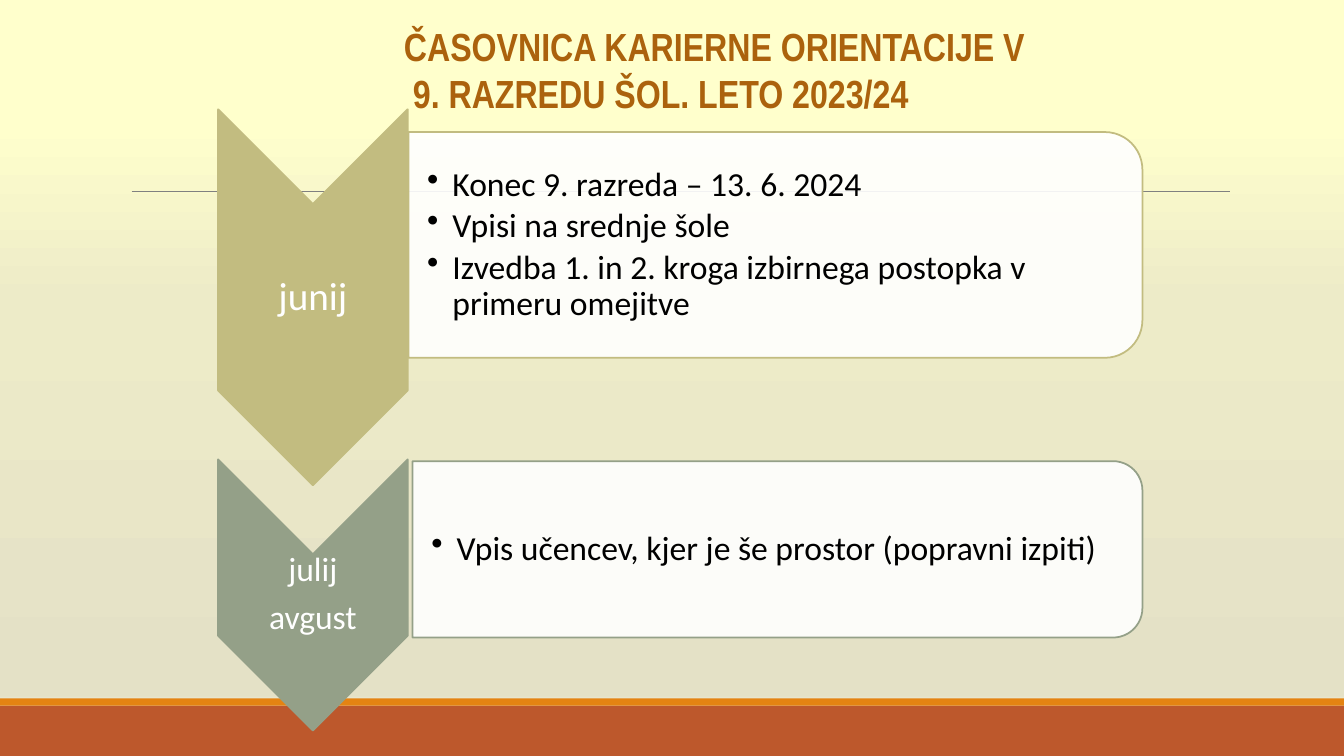
from dataclasses import dataclass

from lxml.etree import SubElement
from pptx import Presentation
from pptx.dml.color import RGBColor
from pptx.enum.shapes import MSO_CONNECTOR, MSO_SHAPE as SHAPE
from pptx.enum.text import MSO_ANCHOR, MSO_AUTO_SIZE, PP_ALIGN as ALIGN
from pptx.oxml.ns import qn
from pptx.util import Pt

WIDTH, HEIGHT = 960, 540
CHEVRON_X, CHEVRON_WIDTH = 223.5, 135.4
PANEL_RIGHT = 816
CORNER_INSET = 0.293 / 6  # text inset of a rounded corner, as a share of panel height
BACKGROUND = [(16, "FFFFCC"), (40, "EDEBC8"), (92, "E4E1C6"),
              (93, "EFEEDE"), (100, "EDEBD9")]


@dataclass
class Step:
    months: list[str]
    tasks: list[str]
    color: str
    month_size: float
    chevron_y: float
    chevron_length: float
    panel_left: float
    panel_y: float
    panel_height: float


STEPS = [
    Step(["junij"],
         ["Konec 9. razreda – 13. 6. 2024", "Vpisi na srednje šole",
          "Izvedba 1. in 2. kroga izbirnega postopka v primeru omejitve"],
         "C2BC80", 28, 212.4, 268.6, 291.7, 175, 161.3),
    Step(["julij", "avgust"],
         ["Vpis učencev, kjer je še prostor (popravni izpiti)"],
         "94A088", 24, 425, 193.7, 294.7, 392.4, 126),
]


def rgb(value: str) -> RGBColor:
    return RGBColor.from_string(value)


def set_background(s) -> None:
    fill = s.background.fill
    fill.gradient()
    fill.gradient_angle = 270
    stops = s.element.find(".//" + qn("a:gsLst"))
    stops.clear()
    for position, color in BACKGROUND:
        stop = SubElement(stops, qn("a:gs"), pos=str(position * 1000))
        SubElement(stop, qn("a:srgbClr"), val=color)


def add_box(s, kind, left: float, top: float, width: float, height: float,
            fill: str, line: str | None = None):
    sp = s.shapes.add_shape(kind, Pt(left), Pt(top), Pt(width), Pt(height))
    sp.shadow.inherit = False
    sp.fill.solid()
    sp.fill.fore_color.rgb = rgb(fill)
    if line:
        sp.line.color.rgb = rgb(line)
        sp.line.width = Pt(1.25)
    else:
        sp.line.fill.background()
    return sp


def add_turned(s, kind, x: float, y: float, across: float, down: float,
               fill: str, line: str):
    """Draw a shape turned a quarter clockwise, centred on (x, y)."""
    sp = add_box(s, kind, x - down / 2, y - across / 2, down, across, fill, line)
    sp.rotation = 90
    return sp


def add_text(s, left: float, y: float, width: float, height: float,
             lines: list[str], size: float, color: str, gap: float, inset: float,
             bullets: bool = False) -> None:
    """Write Calibri lines in a box whose vertical middle is y."""
    sp = s.shapes.add_textbox(Pt(left), Pt(y - height / 2), Pt(width), Pt(height))
    tf = sp.text_frame
    tf.word_wrap = True
    tf.vertical_anchor = MSO_ANCHOR.MIDDLE
    tf.margin_left = Pt(inset)
    tf.margin_top = tf.margin_right = tf.margin_bottom = Pt(1.5)
    for i, line in enumerate(lines):
        p = tf.add_paragraph() if i else tf.paragraphs[0]
        p.text = line
        p.alignment = ALIGN.LEFT if bullets else ALIGN.CENTER
        p.line_spacing = 0.9
        p.space_after = Pt(size * gap)
        p.font.name = "Calibri"
        p.font.size = Pt(size)
        p.font.color.rgb = rgb(color)
        if bullets:
            pr = p._p.get_or_add_pPr()
            pr.set("marL", str(Pt(18)))
            pr.set("indent", str(-Pt(18)))
            bullet = pr.makeelement(qn("a:buChar"), {"char": "•"})
            pr.insert_element_before(bullet, "a:tabLst", "a:defRPr", "a:extLst")


def add_step(s, step: Step) -> None:
    add_turned(s, SHAPE.CHEVRON, CHEVRON_X, step.chevron_y, CHEVRON_WIDTH,
               step.chevron_length, step.color, step.color)
    add_text(s, CHEVRON_X - CHEVRON_WIDTH / 2, step.chevron_y, CHEVRON_WIDTH,
             step.chevron_length - CHEVRON_WIDTH, step.months, step.month_size,
             "FFFFFF", 0.35, 1.5)

    # A turned panel: its long side runs across the slide.
    width = PANEL_RIGHT - step.panel_left
    panel = add_turned(s, SHAPE.ROUND_2_SAME_RECTANGLE,
                       step.panel_left + width / 2, step.panel_y, width,
                       step.panel_height, "FFFFFF", step.color)
    color = panel.fill._xPr.find(qn("a:solidFill")).find(qn("a:srgbClr"))
    SubElement(color, qn("a:alpha"), val="90000")
    inset = step.panel_height * CORNER_INSET
    add_text(s, step.panel_left, step.panel_y, width - inset,
             step.panel_height - 2 * inset, step.tasks, 24, "000000", 0.15, 13.5,
             bullets=True)


def add_rule(s) -> None:
    rule = s.shapes.add_connector(MSO_CONNECTOR.STRAIGHT, Pt(94), Pt(136.5),
                                  Pt(878.5), Pt(136.5))
    rule.line.color.rgb = rgb("808080")
    rule.line.width = Pt(0.5)
    SubElement(rule._element.spPr, qn("a:effectLst"))


def add_title(s) -> None:
    sp = s.shapes.add_textbox(Pt(281.5), Pt(12.2), Pt(534), Pt(75))
    tf = sp.text_frame
    tf.word_wrap = True
    tf.auto_size = MSO_AUTO_SIZE.SHAPE_TO_FIT_TEXT
    tf.text = "ČASOVNICA KARIERNE ORIENTACIJE V\n 9. RAZREDU ŠOL. LETO 2023/24"
    for p in tf.paragraphs:
        p.font.name = "Arial Narrow"
        p.font.size = Pt(28)
        p.font.bold = True
        p.font.color.rgb = rgb("AB620D")


def main() -> None:
    prs = Presentation()
    prs.slide_width, prs.slide_height = Pt(WIDTH), Pt(HEIGHT)
    s = prs.slides.add_slide(prs.slide_layouts[6])
    set_background(s)
    add_rule(s)
    add_box(s, SHAPE.RECTANGLE, 0, 504, WIDTH, 36, "BD582C")
    add_box(s, SHAPE.RECTANGLE, 0, 498.8, WIDTH, 5.2, "E48312")
    for step in STEPS:
        add_step(s, step)
    add_title(s)
    prs.save("out.pptx")


if __name__ == "__main__":
    main()
